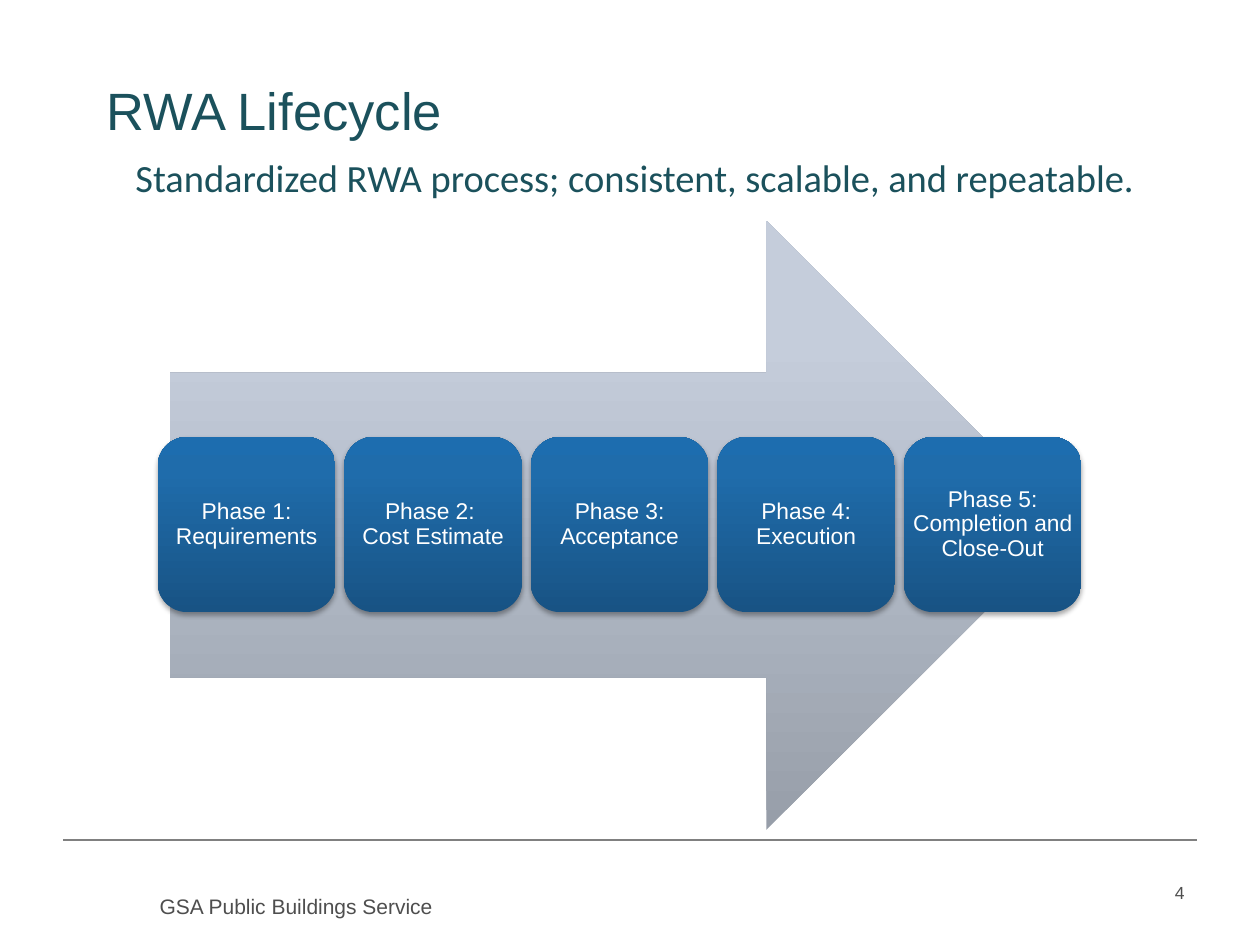
import pptx
import pptx.dml.color
import pptx.enum.shapes
import pptx.enum.text
import pptx.oxml
import pptx.oxml.ns
import pptx.util

Cm = pptx.util.Cm
Pt = pptx.util.Pt
Shapes = pptx.enum.shapes.MSO_SHAPE
Align = pptx.enum.text.PP_ALIGN
Anchor = pptx.enum.text.MSO_ANCHOR

COLORS = {
    "teal": "1B515C",
    "gray": "4E4E4E",
    "rule": "808080",
    "white": "FFFFFF",
    "shadow": "000000",
}
ARROW_STOPS = [(0, "979EA9"), (80, "C5CDDB"), (100, "C5CEDC")]
PHASE_STOPS = [(0, "185384"), (80, "1F6CAB"), (100, "1D6DAF")]
PHASES = [
    "Phase 1: Requirements",
    "Phase 2: \vCost Estimate",
    "Phase 3: Acceptance",
    "Phase 4: Execution",
    "Phase 5: Completion and Close-Out",
]


def element(tag, attributes, children=""):
    namespace = pptx.oxml.ns.nsdecls("a")
    return pptx.oxml.parse_xml(
        f"<a:{tag} {namespace} {attributes}>{children}</a:{tag}>"
    )


class SlideBuilder:
    def __init__(self, page, font="Arial"):
        self.page = page
        self.font = font

    def fill_text(self, box, text, size, color, font=None, margins=(0.25, 0.13),
                  anchor=Anchor.TOP, **layout):
        frame = box.text_frame
        side, edge = margins
        frame_format = {
            "word_wrap": True,
            "vertical_anchor": anchor,
            "margin_left": Cm(side),
            "margin_right": Cm(side),
            "margin_top": Cm(edge),
            "margin_bottom": Cm(edge),
        }
        for name, value in frame_format.items():
            setattr(frame, name, value)
        para = frame.paragraphs[0]
        para.text = text
        for name, value in layout.items():
            setattr(para, name, value)
        for name, value in {"name": font or self.font, "size": Pt(size)}.items():
            setattr(para.font, name, value)
        para.font.color.rgb = pptx.dml.color.RGBColor.from_string(COLORS[color])

    def text(self, position, text, size, color, **layout):
        box = self.page.shapes.add_textbox(*map(Cm, position))
        self.fill_text(box, text, size, color, **layout)

    def shape(self, kind, position, stops):
        shape = self.page.shapes.add_shape(kind, *map(Cm, position))
        shape.shadow.inherit = False
        shape.line.fill.background()
        marks = "".join(
            f'<a:gs pos="{place * 1000}"><a:srgbClr val="{color}"/></a:gs>'
            for place, color in stops
        )
        gradient = element(
            "gradFill", 'rotWithShape="1"',
            f'<a:gsLst>{marks}</a:gsLst><a:lin ang="16200000" scaled="0"/>',
        )
        shape.element.spPr.find(pptx.oxml.ns.qn("a:prstGeom")).addnext(gradient)
        return shape

    def phase(self, position, text):
        box = self.shape(Shapes.ROUNDED_RECTANGLE, position, PHASE_STOPS)
        shadow = element(
            "outerShdw",
            f'blurRad="{Pt(3.1)}" dist="{Pt(1.8)}" dir="5400000" rotWithShape="0"',
            f'<a:srgbClr val="{COLORS["shadow"]}"><a:alpha val="35000"/></a:srgbClr>',
        )
        box.element.spPr.find(pptx.oxml.ns.qn("a:effectLst")).append(shadow)
        self.fill_text(box, text, 13, "white", margins=(0, 0),
                       anchor=Anchor.MIDDLE, alignment=Align.CENTER,
                       line_spacing=0.9)

    def rule(self, left, right, top):
        line = self.page.shapes.add_connector(
            pptx.enum.shapes.MSO_CONNECTOR.STRAIGHT,
            Cm(left), Cm(top), Cm(right), Cm(top),
        )
        line.line.width = Pt(1)
        line.line.color.rgb = pptx.dml.color.RGBColor.from_string(COLORS["rule"])
        line.element.spPr.append(element("effectLst", ""))


def main():
    deck = pptx.Presentation()
    deck.slide_width, deck.slide_height = Cm(25.4), Cm(19.05)
    builder = SlideBuilder(deck.slides.add_slide(deck.slide_layouts[6]))

    builder.rule(1.27, 24.13, 16.94)
    builder.text((1.9, 0.64, 21.59, 3.38), "RWA Lifecycle", 30, "teal",
                 anchor=Anchor.MIDDLE, line_spacing=0.8)
    builder.text((18.21, 17.65, 5.92, 1.02), "4", 10, "gray",
                 alignment=Align.RIGHT)
    builder.text((2.97, 17.88, 7.19, 1.27), "GSA Public Buildings Service",
                 12, "gray")
    builder.text((1.47, 2.97, 22.66, 2.11),
                 "Standardized RWA process; consistent, scalable, and repeatable.",
                 22, "teal", font="Calibri", alignment=Align.CENTER)

    builder.shape(Shapes.RIGHT_ARROW, (3.43, 4.45, 18.16, 12.28), ARROW_STOPS)
    left, pitch = 3.18, 3.76
    for index, label in enumerate(PHASES):
        builder.phase((left + index * pitch, 8.81, 3.58, 3.53), label)

    deck.save("out.pptx")


if __name__ == "__main__":
    main()
